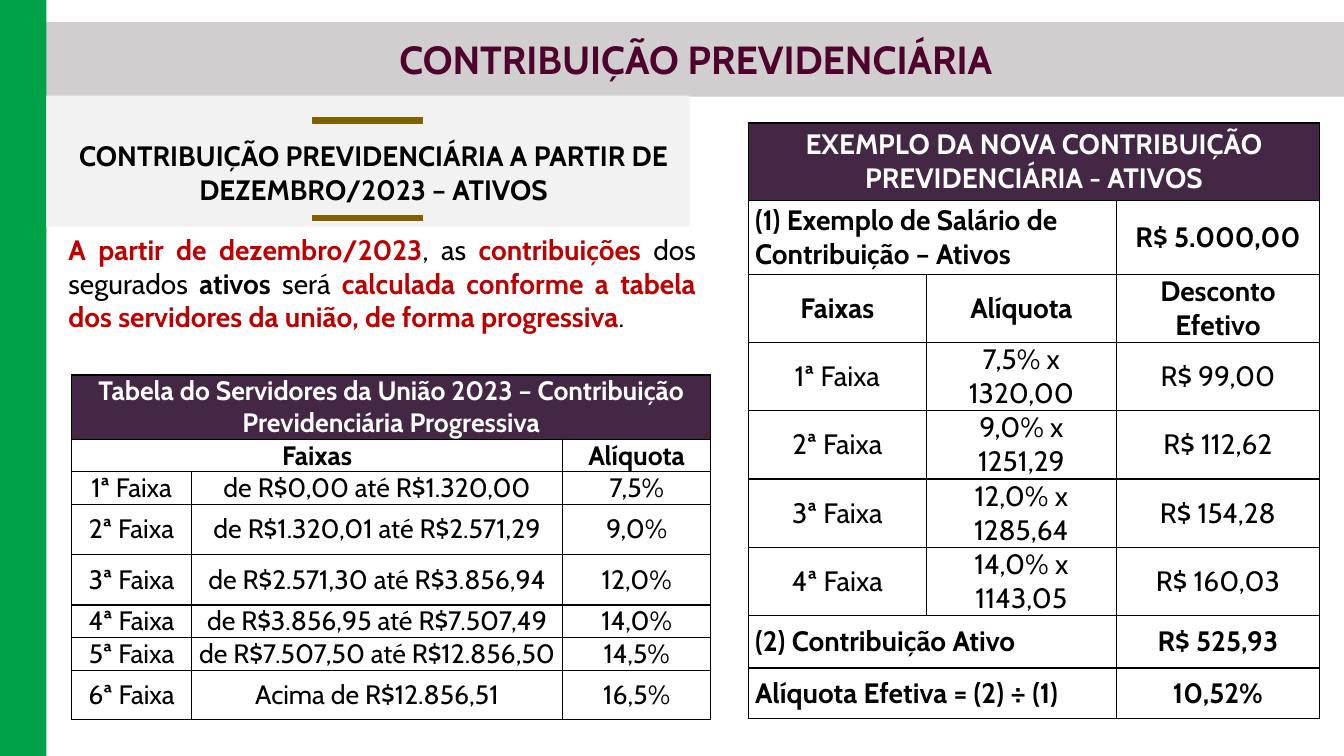
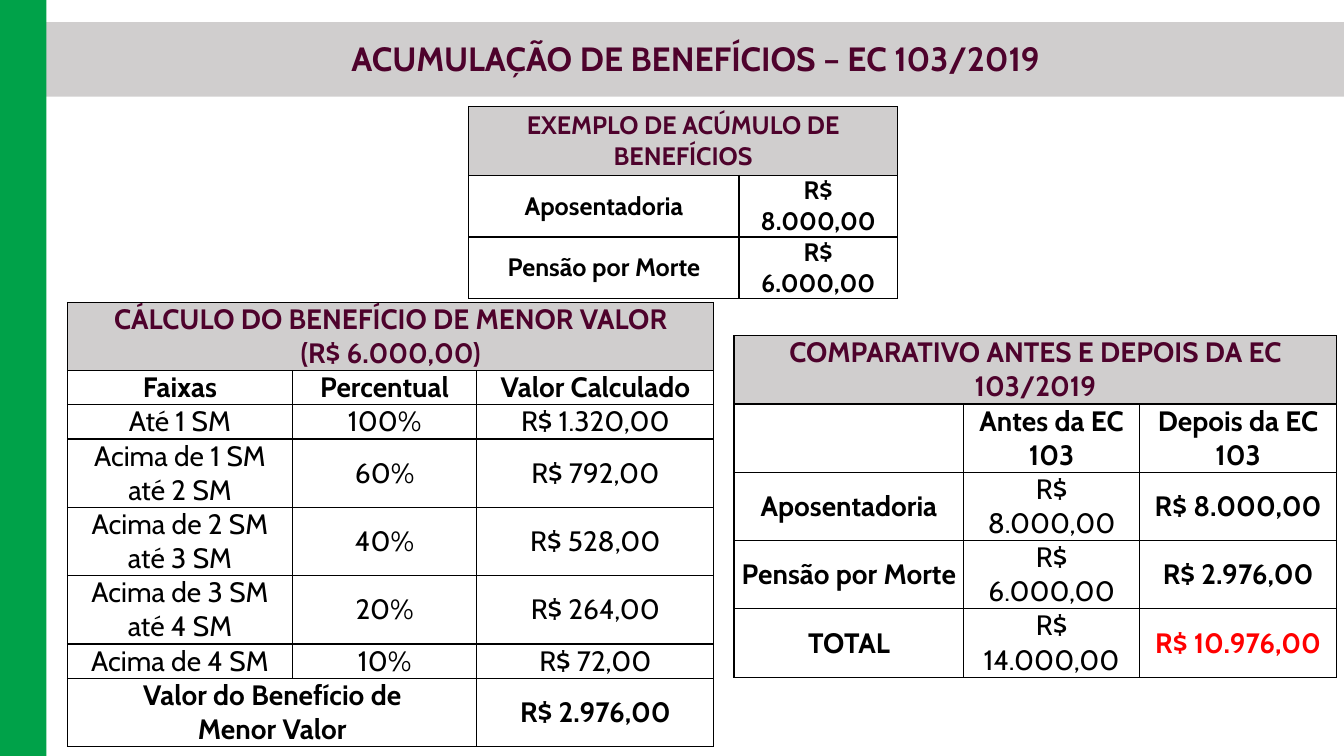
from lxml import etree
from pptx import Presentation
from pptx.dml.color import RGBColor
from pptx.enum.shapes import MSO_SHAPE
from pptx.enum.text import MSO_ANCHOR, MSO_AUTO_SIZE, PP_ALIGN
from pptx.oxml.ns import qn
from pptx.util import Inches, Pt

RECT = MSO_SHAPE.RECTANGLE
TOP, MIDDLE = MSO_ANCHOR.TOP, MSO_ANCHOR.MIDDLE
LEFT, CENTER, JUSTIFY = PP_ALIGN.LEFT, PP_ALIGN.CENTER, PP_ALIGN.JUSTIFY
NO_FIT = MSO_AUTO_SIZE.NONE

FONT = "Cabin"
COLORS = {
    "black": "000000", "white": "FFFFFF", "green": "00A249", "gray": "D0CECE",
    "light": "F2F2F2", "gold": "806000", "wine": "4E022C", "purple": "442745",
    "crimson": "C00000", "red": "FF0000",
}


def rgb(name):
    return RGBColor.from_string(COLORS[name])


def bold(text, color="black", align=CENTER):
    """A bold table cell; a plain string is a regular, centred one."""
    return text, {"bold": True, "color": color, "align": align}


def bold_row(*texts):
    return [text and bold(text) for text in texts]


class Deck:
    def __init__(self):
        self.prs = Presentation()
        self.prs.slide_width, self.prs.slide_height = Inches(13.33), Inches(7.5)
        self.s = None

    def slide(self, title, size, top, height):
        self.s = self.prs.slides.add_slide(self.prs.slide_layouts[5])
        # Title band and side stripe
        self.rect(0.22, 0.22, 13.11, 0.74, "gray")
        self.rect(0, 0, 0.46, 7.5, "green")
        # Title, brought in front of the band
        sp = self.s.shapes.title
        self.s.shapes._spTree.append(sp._element)
        self.fill_box(sp, (0.46, top, 12.88, height), [(title, "wine", True)], size, CENTER)

    def rect(self, x, y, w, h, color, line=False):
        sp = self.s.shapes.add_shape(RECT, Inches(x), Inches(y), Inches(w), Inches(h))
        sp.shadow.inherit = False
        sp.fill.solid()
        sp.fill.fore_color.rgb = rgb(color)
        if line:
            sp.line.color.rgb = rgb(color)
            sp.line.width = Pt(1)
        else:
            sp.line.fill.background()

    def style(self, r, size, color, is_bold):
        formats = {"name": FONT, "size": Pt(size), "bold": is_bold}
        for key, value in formats.items():
            setattr(r.font, key, value)
        r.font.color.rgb = rgb(color)

    def fill_box(self, sp, box, runs, size, align):
        for key, value in zip(("left", "top", "width", "height"), box):
            setattr(sp, key, Inches(value))
        tf = sp.text_frame
        formats = {"word_wrap": True, "auto_size": NO_FIT, "vertical_anchor": TOP}
        for key, value in formats.items():
            setattr(tf, key, value)
        p = tf.paragraphs[0]
        p.alignment = align
        for text, color, is_bold in runs:
            r = p.add_run()
            r.text = text
            self.style(r, size, color, is_bold)

    def text(self, box, runs, size, align):
        sp = self.s.shapes.add_textbox(*map(Inches, box))
        self.fill_box(sp, box, runs, size, align)

    def border(self, cell):
        tcPr = cell._tc.get_or_add_tcPr()
        for side in ("lnL", "lnR", "lnT", "lnB"):
            ln = etree.SubElement(tcPr, qn(f"a:{side}"), w=str(Pt(1)))
            fill = etree.SubElement(ln, qn("a:solidFill"))
            etree.SubElement(fill, qn("a:srgbClr"), val=COLORS["black"])

    def table(self, x, y, cols, heights, title, rows, size=20, head=("gray", "wine")):
        """The title spans the first row; None joins a cell to the one before."""
        fill, color = head
        rows = [[bold(title, color)] + [None] * (len(cols) - 1)] + rows
        tbl = self.s.shapes.add_table(
            len(rows), len(cols), Inches(x), Inches(y),
            Inches(sum(cols)), Inches(sum(heights))).table
        tbl.first_row = tbl.horz_banding = False
        for col, width in zip(tbl.columns, cols):
            col.width = Inches(width)
        for i, (row, height) in enumerate(zip(rows, heights)):
            tbl.rows[i].height = Inches(height)
            start = 0
            for j, content in enumerate(row):
                cell = tbl.cell(i, j)
                self.border(cell)
                if i:
                    cell.fill.background()
                else:
                    cell.fill.solid()
                    cell.fill.fore_color.rgb = rgb(fill)
                if content is None:
                    if j + 1 == len(row) or row[j + 1] is not None:
                        tbl.cell(i, start).merge(cell)
                    continue
                start = j
                self.write_cell(cell, content, size)

    def write_cell(self, cell, content, size):
        text, fmt = content if isinstance(content, tuple) else (content, {})
        formats = {"margin_left": Inches(0.07), "margin_right": Inches(0.07),
                   "margin_top": 0, "margin_bottom": 0, "vertical_anchor": MIDDLE}
        for key, value in formats.items():
            setattr(cell, key, value)
        cell.text_frame.text = text
        for p in cell.text_frame.paragraphs:
            p.alignment = fmt.get("align", CENTER)
            for r in p.runs:
                self.style(r, size, fmt.get("color", "black"), fmt.get("bold", False))


def contribution(deck):
    deck.slide("CONTRIBUIÇÃO PREVIDENCIÁRIA", 28, 0.3, 0.57)

    # Subheading between two gold bars
    deck.rect(0.46, 0.95, 6.38, 1.3, "light")
    deck.text((0.58, 1.33, 6.25, 0.77),
              [("CONTRIBUIÇÃO PREVIDENCIÁRIA A PARTIR DE DEZEMBRO/2023 – ATIVOS",
                "black", True)], 20, CENTER)
    for y in (1.17, 2.14):
        deck.rect(3.1, y, 1.09, 0.05, "gold", line=True)

    # Introduction
    deck.text((0.58, 2.26, 6.42, 1.45), [
        ("A partir de dezembro/2023", "crimson", True),
        (", as ", "black", False),
        ("contribuições ", "crimson", True),
        ("dos segurados ", "black", False),
        ("ativos", "black", True),
        (" será ", "black", False),
        ("calculada conforme a tabela dos servidores da união, de forma progressiva",
         "crimson", True),
        (".", "black", False),
    ], 20, JUSTIFY)

    # Progressive rates
    deck.table(
        0.71, 3.72, (1.19, 3.68, 1.47), (0.61, 0.31, 0.25, 0.5, 0.5, 0.25, 0.33, 0.49),
        "Tabela do Servidores da União 2023 – Contribuição Previdenciária Progressiva", [
            bold_row("Faixas", None, "Alíquota"),
            ["1ª Faixa", "de R$0,00 até R$1.320,00", "7,5%"],
            ["2ª Faixa", "de R$1.320,01 até R$2.571,29", "9,0%"],
            ["3ª Faixa", "de R$2.571,30 até R$3.856,94", "12,0%"],
            ["4ª Faixa", "de R$3.856,95 até R$7.507,49", "14,0%"],
            ["5ª Faixa", "de R$7.507,50 até R$12.856,50", "14,5%"],
            ["6ª Faixa", "Acima de R$12.856,51", "16,5%"],
        ], size=19, head=("purple", "white"))

    # Worked example
    deck.table(
        7.42, 1.22, (1.77, 1.88, 2.02),
        (0.77, 0.73, 0.38, 0.37, 0.42, 0.4, 0.38, 0.52, 0.5),
        "EXEMPLO DA NOVA CONTRIBUIÇÃO PREVIDENCIÁRIA - ATIVOS", [
            [bold("(1) Exemplo de Salário de Contribuição – Ativos", align=LEFT),
             None, bold("R$ 5.000,00")],
            bold_row("Faixas", "Alíquota", "Desconto Efetivo"),
            ["1ª Faixa", "7,5% x 1320,00", "R$ 99,00"],
            ["2ª Faixa", "9,0% x 1251,29", "R$ 112,62"],
            ["3ª Faixa", "12,0% x 1285,64", "R$ 154,28"],
            ["4ª Faixa", "14,0% x 1143,05", "R$ 160,03"],
            [bold("(2) Contribuição Ativo", align=LEFT), None, bold("R$ 525,93")],
            [bold("Alíquota Efetiva = (2) ÷ (1)", align=LEFT), None, bold("10,52%")],
        ], head=("purple", "white"))


def accumulation(deck):
    deck.slide("ACUMULAÇÃO DE BENEFÍCIOS – EC 103/2019", 24, 0.33, 0.5)

    # Calculation of the smaller benefit
    deck.table(
        0.67, 3, (2.23, 1.83, 2.35), (0.53, *[0.33] * 6, 0.48),
        "CÁLCULO DO BENEFÍCIO DE MENOR VALOR\n(R$ 6.000,00)", [
            bold_row("Faixas", "Percentual", "Valor Calculado"),
            ["Até 1 SM", "100%", "R$ 1.320,00"],
            ["Acima de 1 SM até 2 SM", "60%", "R$ 792,00"],
            ["Acima de 2 SM até 3 SM", "40%", "R$ 528,00"],
            ["Acima de 3 SM até 4 SM", "20%", "R$ 264,00"],
            ["Acima de 4 SM", "10%", "R$ 72,00"],
            bold_row("Valor do Benefício de\nMenor Valor", None, "R$ 2.976,00"),
        ])

    # Benefits held together
    deck.table(
        4.65, 1.06, (2.68, 1.57), (0.68, 0.57, 0.5),
        "EXEMPLO DE ACÚMULO DE BENEFÍCIOS", [
            bold_row("Aposentadoria", "R$ 8.000,00"),
            bold_row("Pensão por Morte", "R$ 6.000,00"),
        ], size=18)

    # Before and after
    deck.table(
        7.28, 3.33, (2.28, 1.74, 1.96), [0.53] * 5,
        "COMPARATIVO ANTES E DEPOIS DA EC 103/2019", [
            bold_row("", "Antes da EC 103", "Depois da EC 103"),
            [bold("Aposentadoria"), "R$ 8.000,00", bold("R$ 8.000,00")],
            [bold("Pensão por Morte"), "R$ 6.000,00", bold("R$ 2.976,00")],
            [bold("TOTAL"), "R$ 14.000,00", bold("R$ 10.976,00", "red")],
        ])


def main():
    deck = Deck()
    contribution(deck)
    accumulation(deck)
    deck.prs.save("out.pptx")


if __name__ == "__main__":
    main()
